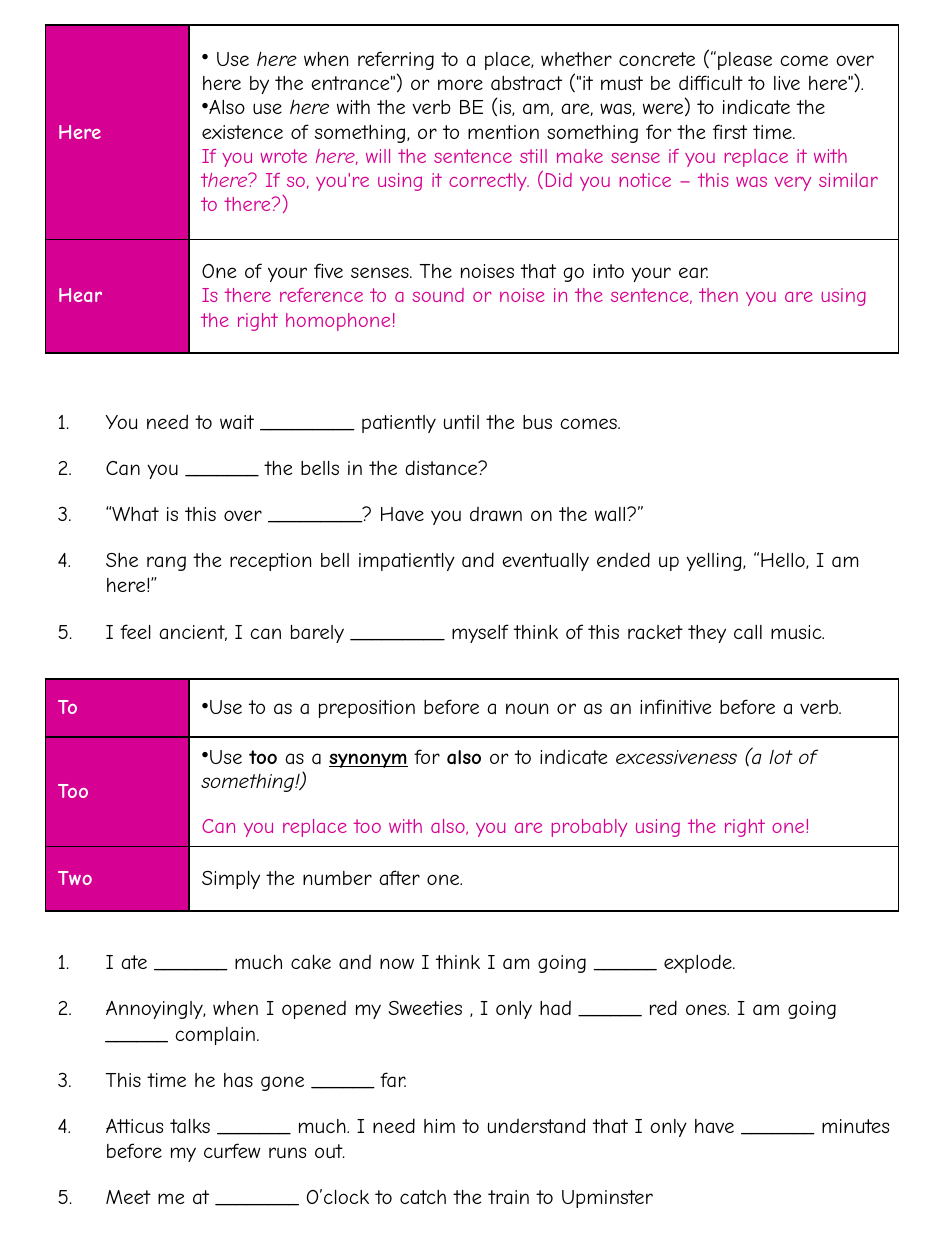
"""Build a homophone worksheet with two rule tables and two numbered exercises."""
from dataclasses import dataclass
from typing import NamedTuple

from lxml import etree
from pptx import Presentation
from pptx.dml.color import RGBColor
from pptx.enum.text import MSO_ANCHOR, MSO_AUTO_SIZE
from pptx.oxml.ns import qn
from pptx.util import Inches, Pt

MIDDLE = MSO_ANCHOR.MIDDLE
GROW = MSO_AUTO_SIZE.SHAPE_TO_FIT_TEXT
COLORS = {"ink": "000000", "pink": "D60093", "paper": "FFFFFF"}
FONT = "Comic Neue"
GRID_COLUMNS, GRID_ROWS = 750, 1000
LEFT = 36
RULE_COLUMNS = (114, 563)
EXERCISE_WIDTH = 685


class Span(NamedTuple):
    text: str
    bold: bool = False
    italic: bool = False
    underline: bool = False


@dataclass(frozen=True)
class Line:
    spans: tuple[Span, ...]
    color: str = "ink"
    bullet: bool = False
    before: int = 0


@dataclass(frozen=True)
class Rule:
    word: str
    height: int
    lines: tuple[Line, ...]


@dataclass(frozen=True)
class Section:
    table_top: int
    rules: tuple[Rule, ...]
    exercise_top: int
    exercise_height: int
    questions: tuple[str, ...]


HERE = Span("here", italic=True)

SECTIONS = (
    Section(
        20,
        (
            Rule("Here", 170, (
                Line((Span(" Use "), HERE, Span(
                    " when referring to a place, whether concrete (“please come over here "
                    "by the entrance\") or more abstract (\"it must be difficult to live here\").")),
                    bullet=True),
                Line((Span("Also use "), HERE, Span(
                    " with the verb BE (is, am, are, was, were) to indicate the existence "
                    "of something, or to mention something for the first time.")),
                    bullet=True),
                Line((Span("If you wrote "), HERE, Span(
                    ", will the sentence still make sense if you replace it with t"),
                    HERE, Span(
                    "? If so, you're using it correctly. (Did you notice – this was very "
                    "similar to there?)")), "pink"),
            )),
            Rule("Hear", 90, (
                Line((Span("One of your five senses. The noises that go into your ear."),)),
                Line((Span("Is there reference to a sound or noise in the sentence, then you "
                           "are using the right homophone!"),), "pink"),
            )),
        ),
        319, 256,
        (
            "You need to wait _________ patiently until the bus comes.",
            "Can you _______ the bells in the distance?",
            "“What is this over _________? Have you drawn on the wall?”",
            "She rang the reception bell impatiently and eventually ended up yelling, "
            "“Hello, I am here!”",
            "I feel ancient, I can barely _________ myself think of this racket they call music.",
        ),
    ),
    Section(
        539,
        (
            Rule("To", 46, (
                Line((Span("Use to as a preposition before a noun or as an infinitive "
                           "before a verb."),), bullet=True),
            )),
            Rule("Too", 87, (
                Line((Span("Use "), Span("too", bold=True), Span(" as a "),
                      Span("synonym", bold=True, underline=True), Span(" for "),
                      Span("also", bold=True), Span(" or to indicate "),
                      Span("excessiveness (a lot of something!)", italic=True)), bullet=True),
                Line((Span("Can you replace too with also, you are probably using the "
                           "right one!"),), "pink", before=12),
            )),
            Rule("Two", 51, (Line((Span("Simply the number after one."),)),)),
        ),
        748, 219,
        (
            "I ate _______ much cake and now I think I am going ______ explode.",
            "Annoyingly, when I opened my Sweeties , I only had ______ red ones. "
            "I am going ______ complain.",
            "This time he has gone ______ far.",
            "Atticus talks _______ much. I need him to understand that I only have _______ "
            "minutes before my curfew runs out.",
            "Meet me at ________ O’clock to catch the train to Upminster",
        ),
    ),
)


def rgb(name: str) -> RGBColor:
    return RGBColor.from_string(COLORS[name])


def write(paragraph, text: str, *, color: str = "ink", bold: bool = False,
          italic: bool = False, underline: bool = False) -> None:
    run = paragraph.add_run()
    run.text = text
    font = run.font
    font.name, font.size = FONT, Pt(12)
    font.bold, font.italic, font.underline = bold, italic, underline
    font.color.rgb = rgb(color)


def paragraph_at(frame, index: int):
    return frame.add_paragraph() if index else frame.paragraphs[0]


def mark(paragraph, tag: str, indent: int, **attributes: str) -> None:
    properties = paragraph._p.get_or_add_pPr()
    properties.set("marL", str(indent))
    properties.set("indent", str(-indent))
    etree.SubElement(properties, qn(tag), attributes)


def style_cell(cell, fill: str) -> None:
    properties = cell._tc.get_or_add_tcPr()
    for side in "LRTB":
        border = etree.SubElement(properties, qn(f"a:ln{side}"), w=str(Pt(1)))
        solid = etree.SubElement(border, qn("a:solidFill"))
        etree.SubElement(solid, qn("a:srgbClr"), val=COLORS["ink"])
    cell.fill.solid()
    cell.fill.fore_color.rgb = rgb(fill)
    cell.vertical_anchor = MIDDLE


def add_rules(slide, section: Section, unit_x: int, unit_y: int) -> None:
    rules = section.rules
    table = slide.shapes.add_table(
        len(rules), len(RULE_COLUMNS), LEFT * unit_x, section.table_top * unit_y,
        sum(RULE_COLUMNS) * unit_x, sum(rule.height for rule in rules) * unit_y).table
    table.first_row = table.horz_banding = False
    for column, width in zip(table.columns, RULE_COLUMNS):
        column.width = width * unit_x
    for row, rule in zip(table.rows, rules):
        row.height = rule.height * unit_y
        word, meaning = row.cells
        style_cell(word, "pink")
        style_cell(meaning, "paper")
        write(word.text_frame.paragraphs[0], rule.word, color="paper", bold=True)
        for index, line in enumerate(rule.lines):
            paragraph = paragraph_at(meaning.text_frame, index)
            paragraph.space_before = Pt(line.before)
            if line.bullet:
                mark(paragraph, "a:buChar", 0, char="•")
            for span in line.spans:
                write(paragraph, color=line.color, **span._asdict())


def add_exercise(slide, section: Section, unit_x: int, unit_y: int) -> None:
    frame = slide.shapes.add_textbox(
        LEFT * unit_x, section.exercise_top * unit_y,
        EXERCISE_WIDTH * unit_x, section.exercise_height * unit_y).text_frame
    frame.word_wrap = True
    frame.auto_size = GROW
    for index, question in enumerate(section.questions):
        paragraph = paragraph_at(frame, index)
        paragraph.space_after = Pt(12)
        mark(paragraph, "a:buAutoNum", Inches(0.38), type="arabicPeriod")
        write(paragraph, question)


def main() -> None:
    deck = Presentation()
    deck.slide_width, deck.slide_height = Inches(7.5), Inches(10)
    unit_x = deck.slide_width // GRID_COLUMNS
    unit_y = deck.slide_height // GRID_ROWS
    slide = deck.slides.add_slide(deck.slide_layouts[6])
    for section in SECTIONS:
        add_rules(slide, section, unit_x, unit_y)
        add_exercise(slide, section, unit_x, unit_y)
    deck.save("out.pptx")


if __name__ == "__main__":
    main()
